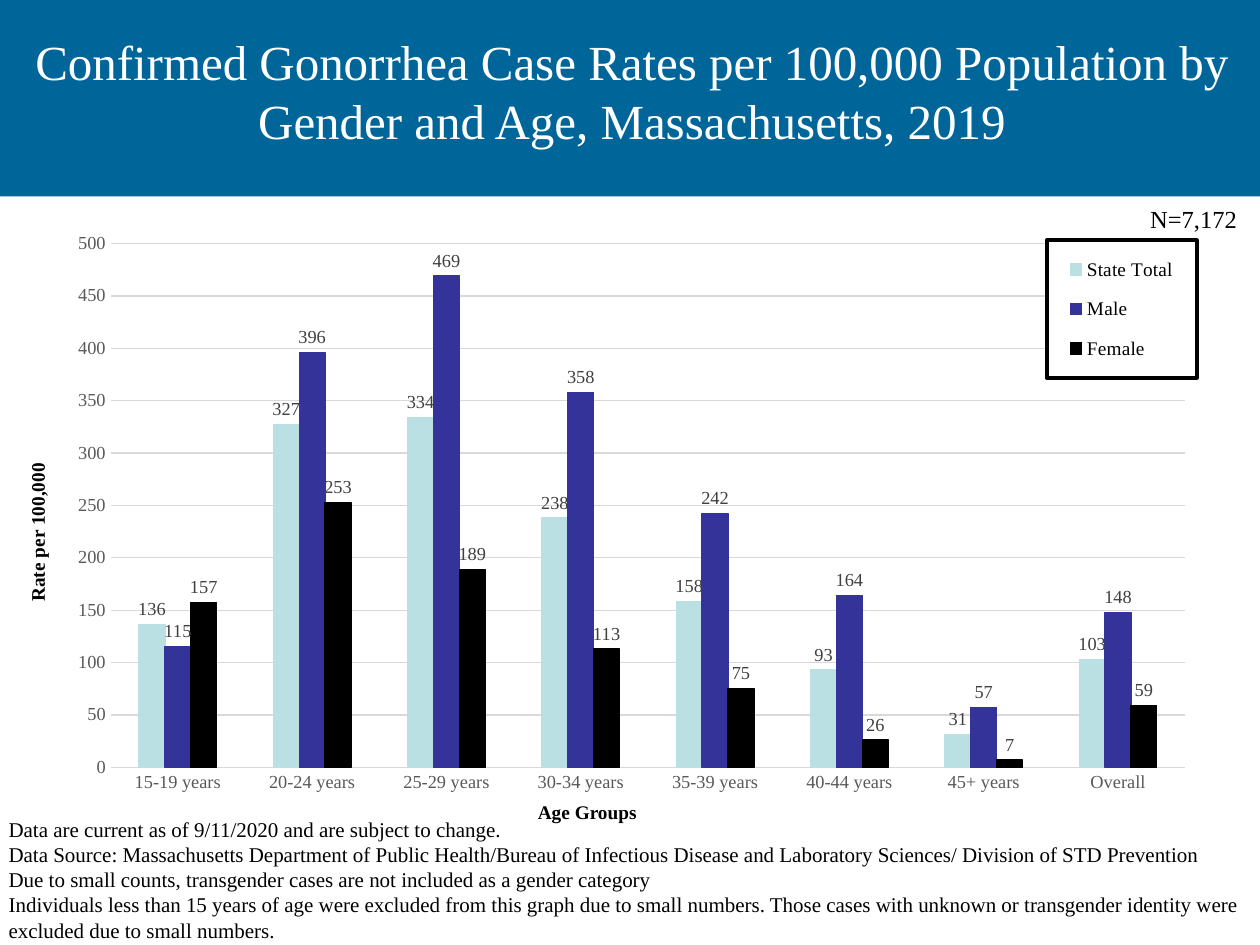
from lxml import etree
from pptx import Presentation
from pptx import util as u
from pptx.chart.data import CategoryChartData
from pptx.dml.color import RGBColor
from pptx.enum import chart as charts, shapes, text
from pptx.oxml import parse_xml
from pptx.oxml.ns import nsdecls, qn

FONT = "Times New Roman"
BLUE = RGBColor(0x00, 0x66, 0x99)
WHITE = RGBColor(0xFF, 0xFF, 0xFF)
BLACK = RGBColor(0x00, 0x00, 0x00)
AXIS_GREY = RGBColor(0x59, 0x59, 0x59)
LABEL_GREY = RGBColor(0x40, 0x40, 0x40)
GRID_GREY = RGBColor(0xD9, 0xD9, 0xD9)
PALE_TEAL = RGBColor(0xBB, 0xE0, 0xE3)
INDIGO = RGBColor(0x33, 0x33, 0x99)

AGE_GROUPS = ["15-19 years", "20-24 years", "25-29 years", "30-34 years",
              "35-39 years", "40-44 years", "45+ years", "Overall"]
RATES = [
    ("State Total", PALE_TEAL, (136, 327, 334, 238, 158, 93, 31, 103)),
    ("Male", INDIGO, (115, 396, 469, 358, 242, 164, 57, 148)),
    ("Female", BLACK, (157, 253, 189, 113, 75, 26, 7, 59)),
]
NOTES = [
    "Data are current as of 9/11/2020 and are subject to change.",
    "Data Source: Massachusetts Department of Public Health/Bureau of Infectious "
    "Disease and Laboratory Sciences/ Division of STD Prevention",
    "Due to small counts, transgender cases are not included as a gender category",
    "Individuals less than 15 years of age were excluded from this graph due to small "
    "numbers. Those cases with unknown or transgender identity were excluded due to "
    "small numbers.",
]


def inches(*lengths):
    return [u.Inches(length) for length in lengths]


def format_font(font, size, color, bold=False):
    font.name, font.size, font.bold = FONT, u.Pt(size), bold
    font.color.rgb = color


def write(frame, lines, size, color=BLACK, bold=False, align=text.PP_ALIGN.LEFT):
    for index, line in enumerate(lines):
        para = frame.paragraphs[0] if index == 0 else frame.add_paragraph()
        para.alignment = align
        span = para.add_run()
        span.text = line
        format_font(span.font, size, color, bold)


def add_text(slide, area, lines, wrap=True, rotation=0, **style):
    box = slide.shapes.add_textbox(*inches(*area))
    box.rotation = rotation
    box.text_frame.word_wrap = wrap
    write(box.text_frame, lines, **style)


def add_title(slide, title_text):
    banner = slide.shapes.add_shape(shapes.MSO_SHAPE.RECTANGLE, *inches(0, 0, 10.02, 1.56))
    banner.shadow.inherit = False
    banner.fill.solid()
    banner.fill.fore_color.rgb = BLUE
    banner.line.fill.background()
    title = slide.shapes.title
    title.left, title.top, title.width, title.height = inches(0, 0, 10.03, 1.43)
    title.text_frame.vertical_anchor = text.MSO_ANCHOR.MIDDLE
    write(title.text_frame, [title_text], size=28, color=WHITE,
          align=text.PP_ALIGN.CENTER)
    title._element.addprevious(banner._element)


def manual_layout(x, y, w, h, inner=False):
    """Layout element whose lengths are shares of the chart's size."""
    target = '<c:layoutTarget val="inner"/>' if inner else ""
    sizes = "".join(f'<c:{name} val="{share}"/>'
                    for name, share in zip("xywh", (x, y, w, h)))
    return parse_xml(f'<c:layout {nsdecls("c")}><c:manualLayout>{target}'
                     f'<c:xMode val="edge"/><c:yMode val="edge"/>{sizes}'
                     '</c:manualLayout></c:layout>')


def replace_layout(parent, layout, position):
    for old in parent.findall(qn("c:layout")):
        parent.remove(old)
    parent.insert(position, layout)


def format_axis(axis):
    axis.major_tick_mark = axis.minor_tick_mark = charts.XL_TICK_MARK.NONE
    format_font(axis.tick_labels.font, 10.5, AXIS_GREY)


def format_line(line, color, width):
    line.color.rgb = color
    line.width = u.Pt(width)


def format_series(series, color):
    series.format.fill.solid()
    series.format.fill.fore_color.rgb = color
    format_line(series.format.line, color, 0.75)
    labels = series.data_labels
    labels.show_value = True
    labels.number_format, labels.number_format_is_linked = "#,##0", False
    labels.position = charts.XL_LABEL_POSITION.OUTSIDE_END
    format_font(labels.font, 10.5, LABEL_GREY)


def format_legend(chart):
    chart.has_legend = True
    legend = chart.legend
    legend.position = charts.XL_LEGEND_POSITION.RIGHT
    legend.include_in_layout = False
    format_font(legend.font, 11, BLACK)
    element = legend._element
    replace_layout(element, manual_layout(0.86, 0.03, 0.13, 0.22), 1)
    frame = parse_xml(
        f'<c:spPr {nsdecls("c", "a")}><a:solidFill><a:srgbClr val="{WHITE}"/></a:solidFill>'
        f'<a:ln w="{u.Pt(2.25)}"><a:solidFill><a:srgbClr val="{BLACK}"/></a:solidFill>'
        '</a:ln></c:spPr>')
    element.find(qn("c:txPr")).addprevious(frame)


def add_rate_chart(slide):
    data = CategoryChartData(number_format="#,##0")
    data.categories = AGE_GROUPS
    for name, _, values in RATES:
        data.add_series(name, values)
    chart = slide.shapes.add_chart(charts.XL_CHART_TYPE.COLUMN_CLUSTERED,
                                   *inches(0.42, 1.76, 9.17, 4.95), data).chart
    format_font(chart.font, 10.5, BLACK)
    chart.has_title = False
    plot = chart.plots[0]
    plot.vary_by_categories = False
    plot.gap_width, plot.overlap = 219, 0
    for series, (_, color, _) in zip(plot.series, RATES):
        format_series(series, color)

    format_axis(chart.category_axis)
    format_line(chart.category_axis.format.line, GRID_GREY, 0.75)
    rate_axis = chart.value_axis
    format_axis(rate_axis)
    rate_axis.minimum_scale, rate_axis.maximum_scale, rate_axis.major_unit = 0, 500, 50
    rate_axis.format.line.fill.background()
    format_line(rate_axis.major_gridlines.format.line, GRID_GREY, 0.75)

    format_legend(chart)
    plot_area = chart._chartSpace.chart.plotArea
    replace_layout(plot_area, manual_layout(0.05, 0.035, 0.93, 0.84, inner=True), 0)


def main():
    deck = Presentation()
    deck.slide_width, deck.slide_height = inches(10, 7.5)
    slide = deck.slides.add_slide(deck.slide_layouts[5])
    add_title(slide, "Confirmed Gonorrhea Case Rates per 100,000 Population by "
                     "Gender and Age, Massachusetts, 2019")
    add_rate_chart(slide)
    add_text(slide, (4.17, 6.3, 1.25, 0.25), ["Age Groups"], size=11, bold=True)
    add_text(slide, (-2.23, 4.08, 5.06, 0.29), ["Rate per 100,000"], rotation=270,
             size=11, bold=True, align=text.PP_ALIGN.CENTER)
    add_text(slide, (9.03, 1.57, 0.9, 0.34), ["N=7,172"], wrap=False, size=14)
    add_text(slide, (-0.03, 6.43, 10.03, 1.11), NOTES, size=12)
    deck.save("out.pptx")


if __name__ == "__main__":
    main()
